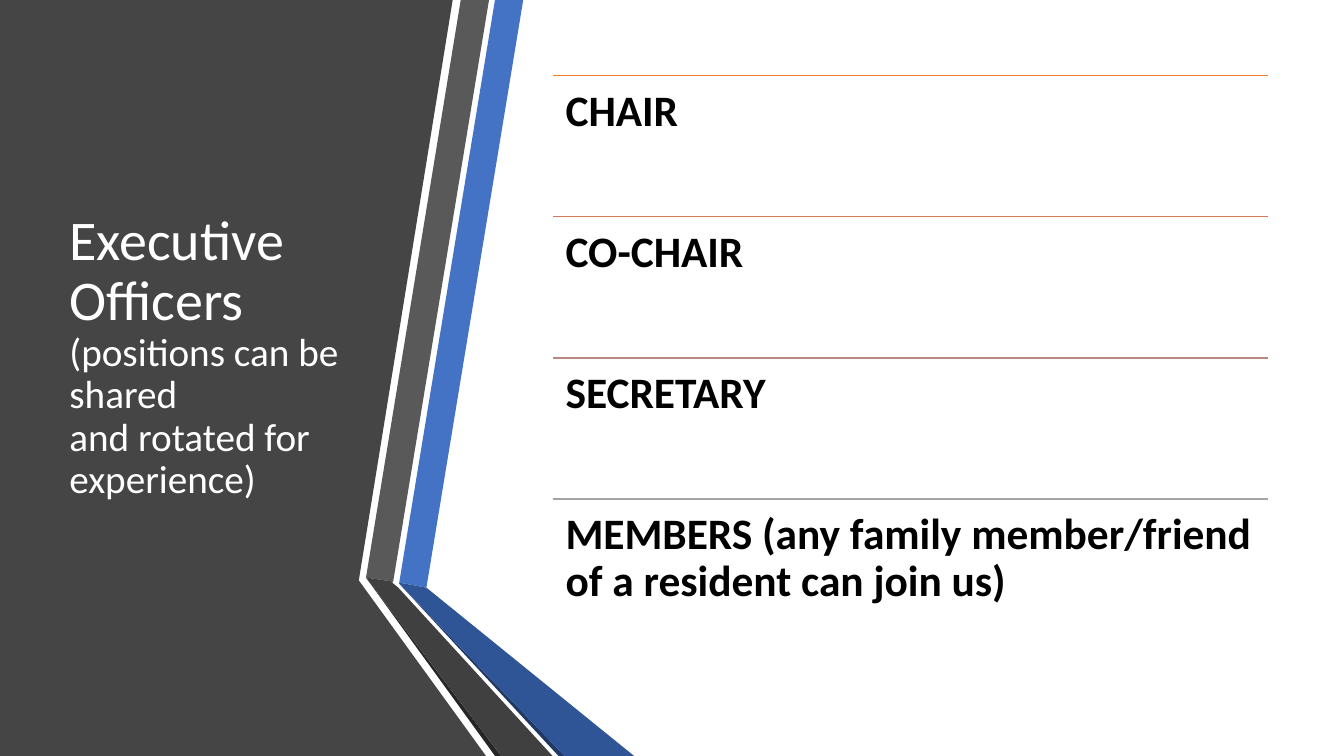
"""Build the executive officers slide."""
from dataclasses import dataclass
from typing import Any

from lxml import etree
from pptx import Presentation
from pptx.dml.color import RGBColor
from pptx.enum.shapes import MSO_CONNECTOR
from pptx.enum.text import MSO_ANCHOR
from pptx.oxml.ns import qn
from pptx.util import Pt

PX = 9144
LINE = MSO_CONNECTOR.STRAIGHT
TOP, MIDDLE = MSO_ANCHOR.TOP, MSO_ANCHOR.MIDDLE
HUES = {
    "panel": "454545", "blue": "4472C4", "gray": "595959",
    "edge": "262626", "navy": "203864", "deep": "2F5597", "coal": "404040",
    "white": "FFFFFF", "black": "000000",
    "orange": "ED7D31", "rust": "D17B5C", "rose": "B98A82", "ash": "A5A5A5",
}


@dataclass(frozen=True)
class Band:
    hue: str
    points: tuple[tuple[int, int], ...]


@dataclass(frozen=True)
class Role:
    text: str
    hue: str


@dataclass(frozen=True)
class Part:
    lines: tuple[str, ...]
    size: int


PANEL = Band("panel", ((0, 0), (449, 0), (356, 575), (356, 576), (482, 750), (0, 750)))
BANDS = (
    Band("blue", ((396, 578), (423, 583), (519, 0), (491, 0))),
    Band("gray", ((485, 0), (457, 0), (363, 573), (390, 577))),
    Band("edge", ((363, 573), (491, 750), (497, 750))),
    Band("navy", ((396, 579), (554, 750), (560, 750))),
    Band("deep", ((396, 579), (560, 750), (629, 750), (423, 583), (396, 578))),
    Band("coal", ((548, 750), (395, 583), (389, 578), (390, 577), (363, 573), (497, 750))),
)
TITLE = (
    Part(("Executive Officers ", ""), 40),
    Part(("(positions can be shared", "and rotated for experience)"), 28),
)
ROLES = (
    Role("CHAIR", "orange"),
    Role("CO-CHAIR", "rust"),
    Role("SECRETARY", "rose"),
    Role("MEMBERS (any family member/friend of a resident can join us)", "ash"),
)
LEFT, START, WIDTH, STEP = 548, 75, 710, 140
SIDES = ("left", "top", "right", "bottom")


def tint(name: str) -> RGBColor:
    """Return the named colour."""
    return RGBColor.from_string(HUES[name])


def apply(target: Any, values: dict[str, Any]) -> None:
    """Set each format value on the target."""
    for name, value in values.items():
        setattr(target, name, value)


def draw_band(shapes: Any, band: Band) -> None:
    """Draw one filled outline."""
    pen = shapes.build_freeform(*band.points[0], scale=PX)
    pen.add_line_segments(band.points[1:], close=True)
    shape = pen.convert_to_shape()
    shape.shadow.inherit = False
    shape.fill.solid()
    shape.fill.fore_color.rgb = tint(band.hue)
    shape.line.fill.background()


def draw_text(shapes: Any, box: tuple[int, ...], parts: tuple[Part, ...],
              frame: dict[str, Any], font: dict[str, Any], hue: str) -> None:
    """Write one paragraph of sized parts in a text box."""
    area = shapes.add_textbox(*(v * PX for v in box)).text_frame
    apply(area, {"word_wrap": True, **frame})
    para = area.paragraphs[0]
    para.line_spacing = 0.9
    for part in parts:
        for index, line in enumerate(part.lines):
            if index:
                para.add_line_break()
            if line:
                run = para.add_run()
                run.text = line
                apply(run.font, {"name": "Calibri", "size": Pt(part.size), **font})
                run.font.color.rgb = tint(hue)


def draw_role(shapes: Any, role: Role, top: int) -> None:
    """Draw a rule with its role below."""
    ends = (LEFT, top, LEFT + WIDTH, top)
    rule = shapes.add_connector(LINE, *(v * PX for v in ends))
    apply(rule.line, {"width": Pt(1)})
    rule.line.color.rgb = tint(role.hue)
    etree.SubElement(rule._element.spPr, qn("a:effectLst"))
    frame = {f"margin_{side}": 13 * PX for side in SIDES}
    draw_text(shapes, (LEFT, top, WIDTH, STEP), (Part((role.text,), 31),),
              {"vertical_anchor": TOP, **frame}, {"bold": True}, "black")


def main() -> None:
    """Build and save the deck."""
    deck = Presentation()
    apply(deck, {"slide_width": 1333 * PX, "slide_height": 750 * PX})
    slide = deck.slides.add_slide(deck.slide_layouts[6])
    draw_band(slide.shapes, PANEL)
    group = slide.shapes.add_group_shape().shapes
    for band in BANDS:
        draw_band(group, band)
    draw_text(slide.shapes, (59, 75, 304, 558), TITLE,
              {"vertical_anchor": MIDDLE}, {"bold": False}, "white")
    group = slide.shapes.add_group_shape().shapes
    for index, role in enumerate(ROLES):
        draw_role(group, role, START + index * STEP)
    deck.save("out.pptx")


if __name__ == "__main__":
    main()
